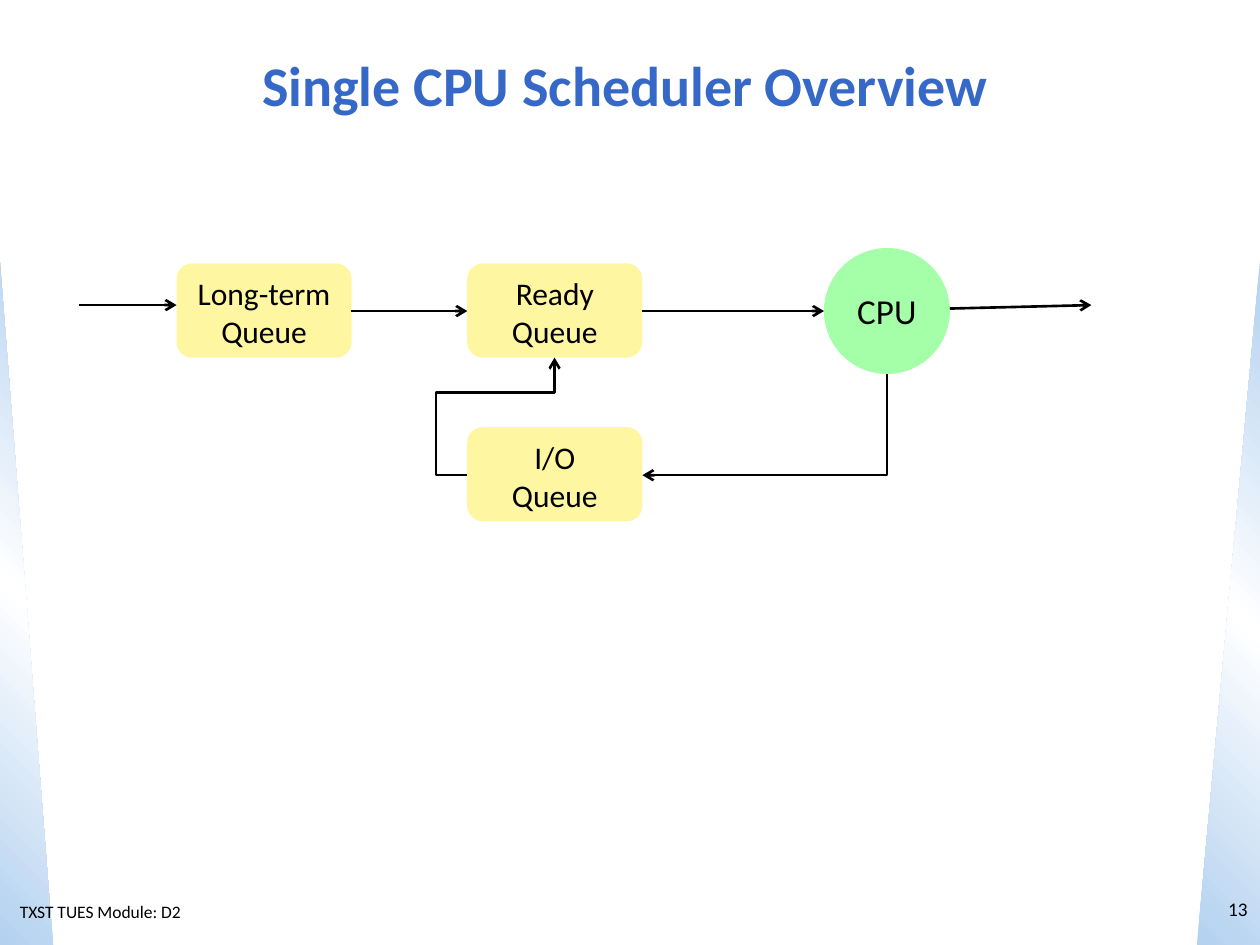
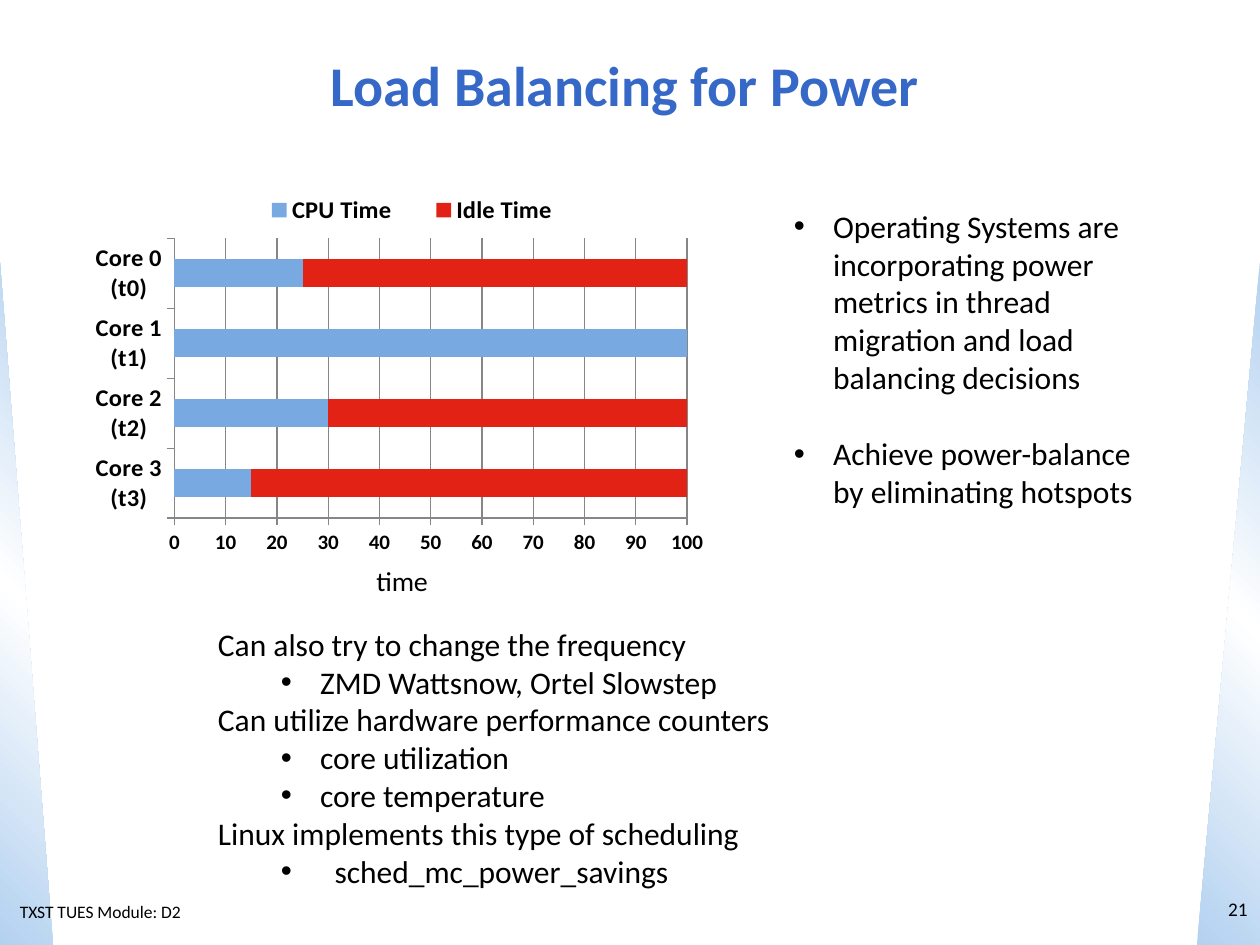
from lxml import etree
from pptx import Presentation
from pptx.chart.data import CategoryChartData
from pptx.dml.color import RGBColor
from pptx.enum.chart import XL_CHART_TYPE as Chart, XL_LEGEND_POSITION as Legend, XL_TICK_MARK as Tick
from pptx.enum.shapes import MSO_CONNECTOR as Conn, MSO_SHAPE as Shape
from pptx.enum.text import MSO_ANCHOR as Anchor, MSO_AUTO_SIZE as AutoSize, PP_ALIGN as Align
from pptx.oxml import parse_xml
from pptx.oxml.ns import nsdecls, qn
from pptx.util import Cm, Pt

COLORS = {
    "text": "000000", "title": "3568C7", "band": "B3D1F0", "white": "FFFFFF",
    "queue": "FFF6A1", "cpu": "A5FFA9", "busy": "78A9E1", "idle": "E12214", "axis": "868686",
}
FONT = "Calibri"
TITLE_ONLY, TWO_CONTENT = 5, 3


def rgb(name):
    return RGBColor.from_string(COLORS[name])


def cms(*values):
    return [Cm(v) for v in values]


class Deck:
    def __init__(self):
        self.prs = Presentation()
        self.prs.slide_width, self.prs.slide_height = cms(25.4, 19.05)
        self.slide = None

    def new_slide(self, layout, title, number):
        self.slide = self.prs.slides.add_slide(self.prs.slide_layouts[layout])
        if len(self.prs.slides) == 1:
            self.backdrop()
        sp = self.slide.shapes.title
        self.place(sp, 0.64, 0.64, 23.93, 2.11)
        sp.text_frame.vertical_anchor = Anchor.MIDDLE
        self.add_text(sp.text_frame.paragraphs[0], title, 32, "title", Align.CENTER, True)
        self.text_box(str(number), 24.13, 17.58, 1.27, 1.47, 11, Align.RIGHT, Anchor.MIDDLE)

    def backdrop(self):
        left = self.band(0, 1.07, 315)
        right = self.band(24.13, 1.27, 45)
        right.element.spPr.find(qn("a:xfrm")).set("flipH", "1")
        footer = self.text_box("TXST TUES Module: D2", 0.15, 18.03, 4.45, 0.69, 10)
        tree = self.prs.slide_master.shapes.element
        for i, sp in enumerate((left, right, footer)):
            tree.insert(2 + i, sp.element)

    def band(self, x, width, angle):
        sp = self.shape(Shape.RIGHT_TRIANGLE, x, 5.28, width, 13.77, "band")
        stops = "".join(
            f'<a:gs pos="{pos}"><a:srgbClr val="{COLORS[c]}"/></a:gs>'
            for pos, c in ((0, "band"), (50000, "white"), (100000, "band")))
        grad = parse_xml(f'<a:gradFill {nsdecls("a")} rotWithShape="1"><a:gsLst>{stops}</a:gsLst>'
                         f'<a:lin ang="{angle * 60000}" scaled="0"/></a:gradFill>')
        spPr = sp.element.spPr
        spPr.replace(spPr.find(qn("a:solidFill")), grad)
        return sp

    def place(self, sp, x, y, w, h):
        sp.left, sp.top, sp.width, sp.height = cms(x, y, w, h)

    def style(self, font, size, color="text", bold=False):
        font.name, font.size, font.bold = FONT, Pt(size), bold
        font.color.rgb = rgb(color)

    def add_text(self, p, text, size, color="text", align=Align.LEFT, bold=False):
        p.alignment = align
        r = p.add_run()
        r.text = text
        self.style(r.font, size, color, bold)

    def text_box(self, text, x, y, w, h, size, align=Align.LEFT, anchor=Anchor.TOP):
        sp = self.slide.shapes.add_textbox(*cms(x, y, w, h))
        tf = sp.text_frame
        tf.word_wrap, tf.vertical_anchor = True, anchor
        self.add_text(tf.paragraphs[0], text, size, align=align)
        return sp

    def shape(self, kind, x, y, w, h, fill, lines=(), size=18, anchor=Anchor.TOP):
        sp = self.slide.shapes.add_shape(kind, *cms(x, y, w, h))
        sp.shadow.inherit = False
        sp.fill.solid()
        sp.fill.fore_color.rgb = rgb(fill)
        sp.line.fill.background()
        tf = sp.text_frame
        tf.word_wrap, tf.vertical_anchor = True, anchor
        for i, line in enumerate(lines):
            p = tf.add_paragraph() if i else tf.paragraphs[0]
            self.add_text(p, line, size, align=Align.CENTER)
        return sp

    def queue(self, x, y, *lines):
        return self.shape(Shape.ROUNDED_RECTANGLE, x, y, 3.53, 1.9, "queue", lines)

    def arrow(self, x1, y1, x2, y2, preset="line", adjust=(), rotation=0):
        cx = self.slide.shapes.add_connector(Conn.STRAIGHT, *cms(x1, y1, x2, y2))
        cx.line.width = Pt(1.5)
        cx.line.color.rgb = rgb("text")
        spPr = cx.element.spPr
        etree.SubElement(spPr.find(qn("a:ln")), qn("a:tailEnd"), type="arrow")
        etree.SubElement(spPr, qn("a:effectLst"))
        geom = spPr.find(qn("a:prstGeom"))
        geom.set("prst", preset)
        for i, value in enumerate(adjust, 1):
            etree.SubElement(geom.find(qn("a:avLst")), qn("a:gd"), name=f"adj{i}", fmla=f"val {value}")
        if rotation:
            spPr.find(qn("a:xfrm")).set("rot", str(rotation * 60000))

    def text_list(self, idx, x, y, w, h, items, gap=0):
        sp = self.slide.placeholders[idx]
        self.place(sp, x, y, w, h)
        tf = sp.text_frame
        tf.auto_size, tf.vertical_anchor = AutoSize.NONE, Anchor.TOP
        for i, (text, margin, hanging) in enumerate(items):
            p = tf.add_paragraph() if i else tf.paragraphs[0]
            p.level = 1 if margin > hanging else 0
            p.space_before = Pt(gap if i else 0)
            pPr = p._p.get_or_add_pPr()
            pPr.set("marL", str(Cm(margin)))
            pPr.set("indent", str(-Cm(hanging)))
            if hanging:
                etree.SubElement(pPr, qn("a:buFont"), typeface="Arial")
                etree.SubElement(pPr, qn("a:buChar"), char="•")
            else:
                etree.SubElement(pPr, qn("a:buNone"))
            self.add_text(p, text, 18)

    def layout(self, parent, before, inner=False, **box):
        old = parent.find(qn("c:layout"))
        if old is not None:
            parent.remove(old)
        target = '<c:layoutTarget val="inner"/>' if inner else ""
        modes = "".join(f'<c:{k}Mode val="edge"/>' for k in "xy")
        sizes = "".join(f'<c:{k} val="{v}"/>' for k, v in box.items())
        node = parse_xml(f'<c:layout {nsdecls("c")}><c:manualLayout>{target}{modes}{sizes}'
                         '</c:manualLayout></c:layout>')
        parent.find(qn(before)).addprevious(node)

    def stacked_bars(self, x, y, w, h, categories, series, axis_title):
        data = CategoryChartData()
        data.categories = categories
        for name, values, _ in series:
            data.add_series(name, values)
        chart = self.slide.shapes.add_chart(Chart.BAR_STACKED, *cms(x, y, w, h), data).chart
        self.style(chart.font, 10)
        chart.has_title = False
        plot = chart.plots[0]
        plot.gap_width, plot.overlap, plot.vary_by_categories = 150, 100, False
        for ser, (_, _, color) in zip(plot.series, series):
            ser.format.fill.solid()
            ser.format.fill.fore_color.rgb = rgb(color)
        cat, val = chart.category_axis, chart.value_axis
        for axis, size in ((cat, 14), (val, 12)):
            self.style(axis.tick_labels.font, size, bold=True)
            axis.major_tick_mark, axis.minor_tick_mark = Tick.OUTSIDE, Tick.NONE
            axis.format.line.color.rgb = rgb("axis")
        val.minimum_scale, val.maximum_scale, val.major_unit = 0, 100, 10
        val.has_major_gridlines = True
        val.major_gridlines.format.line.color.rgb = rgb("axis")
        self.add_text(val.axis_title.text_frame.paragraphs[0], axis_title, 16, align=Align.CENTER)
        self.layout(val.axis_title._element, "c:overlay", x=0.43, y=0.9)
        chart.has_legend = True
        legend = chart.legend
        legend.position, legend.include_in_layout = Legend.TOP, False
        self.style(legend.font, 14, bold=True)
        self.layout(legend._element, "c:overlay", x=0.23, y=0, w=0.52, h=0.08)
        self.layout(chart._chartSpace.chart.plotArea, "c:barChart", True, x=0.14, y=0.11, w=0.755, h=0.693)


def scheduler_overview(deck):
    deck.new_slide(TITLE_ONLY, "Single CPU Scheduler Overview", 13)
    deck.shape(Shape.OVAL, 16.61, 5, 2.54, 2.54, "cpu", ["CPU"], 20, Anchor.MIDDLE)
    deck.queue(9.42, 5.31, "Ready Queue")
    deck.queue(9.42, 8.61, "I/O", "Queue")
    deck.queue(3.56, 5.31, "Long-term Queue")
    deck.arrow(7.07, 6.27, 9.42, 6.27)
    deck.arrow(1.59, 6.15, 3.56, 6.15)
    deck.arrow(12.95, 6.27, 16.61, 6.27)
    deck.arrow(14.4, 6.1, 16.43, 11.03, "bentConnector2", rotation=90)
    deck.arrow(9.42, 9.58, 11.18, 7.21, "bentConnector4", (-36000, 70300))
    deck.arrow(19.15, 6.22, 22, 6.15)


def load_balancing(deck):
    deck.new_slide(TWO_CONTENT, "Load Balancing for Power", 21)
    deck.stacked_bars(
        1.6, 3.91, 13.69, 8.33, [f"Core {n} (t{n})" for n in (3, 2, 1, 0)],
        [("CPU Time", (15, 30, 100, 25), "busy"), ("Idle Time", (85, 70, 0, 75), "idle")], "time")
    deck.text_list(1, 15.75, 4.04, 8.03, 6.4, [
        ("Operating Systems are incorporating power metrics in thread migration "
         "and load balancing decisions", 0.79, 0.79),
        ("Achieve power-balance by eliminating hotspots", 0.79, 0.79)], gap=22)
    deck.text_list(2, 4.14, 12.47, 16.46, 5.64, [
        ("Can also try to change the frequency", 0, 0),
        ("ZMD Wattsnow, Ortel Slowstep", 2.06, 0.79),
        ("Can utilize hardware performance counters", 0, 0),
        ("core utilization", 2.06, 0.79),
        ("core temperature", 2.06, 0.79),
        ("Linux implements this type of scheduling", 0, 0),
        ("sched_mc_power_savings", 2.35, 1.08)])


def main():
    deck = Deck()
    scheduler_overview(deck)
    load_balancing(deck)
    deck.prs.save("out.pptx")


if __name__ == "__main__":
    main()
